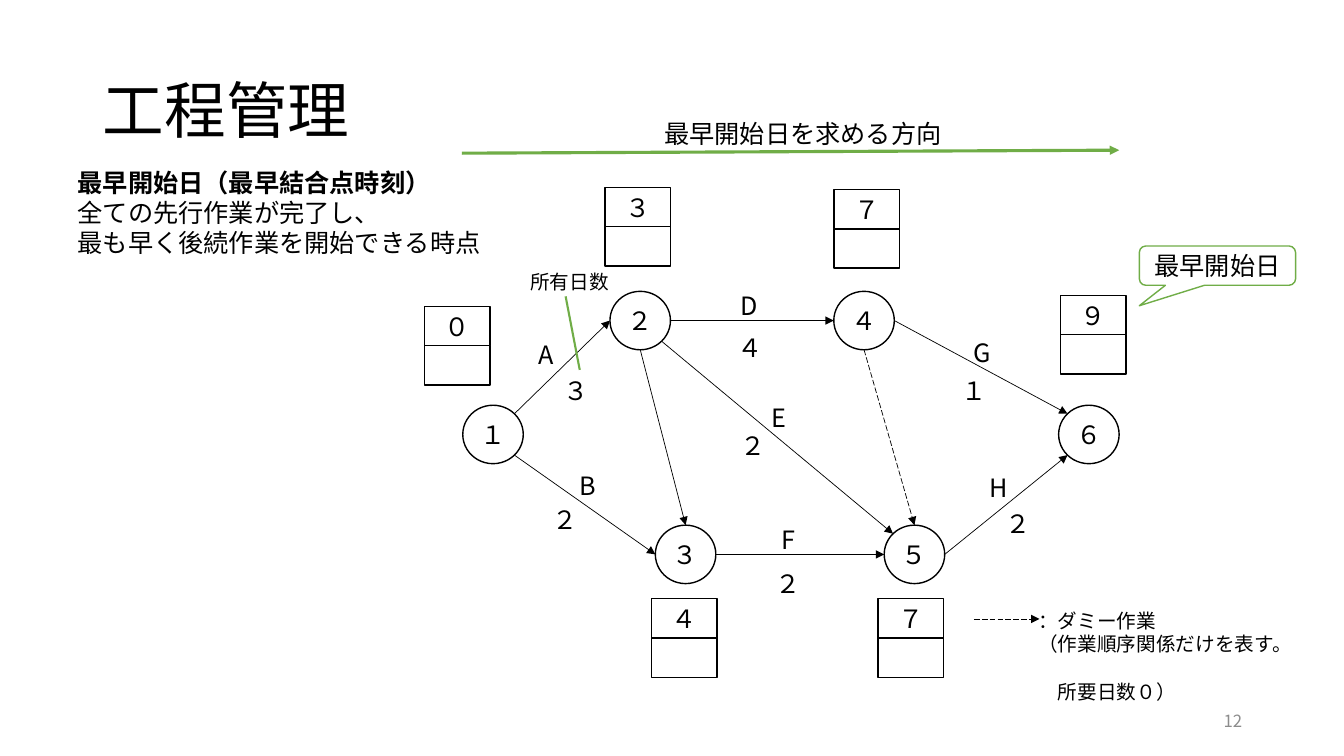
from math import cos, radians, sin

from lxml.etree import SubElement
from pptx import Presentation
from pptx.dml.color import RGBColor
from pptx.enum.dml import MSO_LINE
from pptx.enum.shapes import MSO_CONNECTOR, MSO_SHAPE
from pptx.enum.text import MSO_ANCHOR, MSO_AUTO_SIZE, PP_ALIGN
from pptx.oxml.ns import qn
from pptx.util import Inches, Pt

BLACK = RGBColor(0x00, 0x00, 0x00)
GREEN = RGBColor(0x70, 0xAD, 0x47)
GRAY = RGBColor(0x8C, 0x8C, 0x8C)
FONT = "Noto Sans CJK JP"
LATIN_FONT = "Arial"

NODE_WIDTH, NODE_HEIGHT = 0.6, 0.58
CELL_WIDTH, CELL_HEIGHT = 0.65, 0.39
RIGHT, BOTTOM_RIGHT, BOTTOM, BOTTOM_LEFT = 0, 45, 90, 135
LEFT, TOP_LEFT, TOP, TOP_RIGHT = 180, 225, 270, 315

NODES = {
    "１": (4.59, 4.02), "２": (6.05, 2.89), "３": (6.5, 5.21),
    "４": (8.27, 2.89), "５": (8.77, 5.21), "６": (10.5, 4.02),
}
ACTIVITIES = [
    ("１", TOP_RIGHT, "２", LEFT, None),
    ("１", BOTTOM_RIGHT, "３", LEFT, None),
    ("２", BOTTOM, "３", TOP, None),
    ("３", RIGHT, "５", LEFT, None),
    ("２", BOTTOM_RIGHT, "５", TOP_LEFT, None),
    ("２", RIGHT, "４", LEFT, None),
    ("４", BOTTOM, "５", TOP, MSO_LINE.LONG_DASH),
    ("４", RIGHT, "６", TOP_LEFT, None),
    ("５", RIGHT, "６", BOTTOM_LEFT, None),
]
LABELS = [
    ("A", 5.24, 3.32), ("３", 5.49, 3.67), ("B", 5.65, 4.62), ("２", 5.38, 4.95),
    ("D", 7.25, 2.83), ("４", 7.22, 3.25), ("E", 7.55, 3.94), ("２", 7.25, 4.22),
    ("F", 7.65, 5.15), ("２", 7.59, 5.59), ("G", 9.56, 3.3), ("１", 9.44, 3.67),
    ("H", 9.72, 4.64), ("２", 9.87, 4.99),
]
START_DAYS = [
    ("３", 6, 1.86), ("０", 4.21, 3.04), ("４", 6.46, 5.94),
    ("７", 8.71, 5.94), ("７", 8.27, 1.88), ("９", 10.52, 2.93),
]


def write(para, text, size=18, color=BLACK, bold=False, font=FONT, align=PP_ALIGN.LEFT):
    """Put one formatted span into a paragraph."""
    para.alignment = align
    span = para.add_run()
    span.text = text
    span.font.size = Pt(size)
    span.font.bold = bold
    span.font.color.rgb = color
    span.font.name = font
    SubElement(span.font._element, qn("a:ea")).set("typeface", FONT)


def place(shape, left, top, width, height):
    """Move and size a shape."""
    shape.left, shape.top = Inches(left), Inches(top)
    shape.width, shape.height = Inches(width), Inches(height)


def add_text(page, text, left, top, width=0.5, height=0.4, **style):
    """Add a wrapped text box with one paragraph and return its frame."""
    box = page.shapes.add_textbox(Inches(left), Inches(top), Inches(width), Inches(height))
    frame = box.text_frame
    frame.word_wrap = True
    write(frame.paragraphs[0], text, **style)
    return frame


def add_outline(page, kind, left, top, width, height, text="", color=BLACK):
    """Add an unfilled shape with optional centred text."""
    shape = page.shapes.add_shape(kind, Inches(left), Inches(top), Inches(width), Inches(height))
    shape.shadow.inherit = False
    shape.fill.background()
    shape.line.color.rgb = color
    shape.line.width = Pt(1)
    frame = shape.text_frame
    frame.margin_left = frame.margin_right = frame.margin_top = frame.margin_bottom = 0
    frame.vertical_anchor = MSO_ANCHOR.MIDDLE
    if text:
        write(frame.paragraphs[0], text, align=PP_ALIGN.CENTER)
    return shape


def add_line(page, start, end, color=BLACK, width=0.5, dash=None, arrow=True):
    """Add a straight line, with an arrowhead at its end if wanted."""
    line = page.shapes.add_connector(MSO_CONNECTOR.STRAIGHT, *map(Inches, start + end))
    line.line.color.rgb = color
    line.line.width = Pt(width)
    if dash:
        line.line.dash_style = dash
    if arrow:
        SubElement(line.line._get_or_add_ln(), qn("a:tailEnd")).set("type", "triangle")
    SubElement(line._element.spPr, qn("a:effectLst"))


def node_edge(name, angle):
    """Return the point on a node's rim at a clockwise angle."""
    left, top = NODES[name]
    return (left + NODE_WIDTH / 2 * (1 + cos(radians(angle))),
            top + NODE_HEIGHT / 2 * (1 + sin(radians(angle))))


def add_heading(page):
    """Fill the title and the definition in the body placeholder."""
    title, body = page.shapes.title, page.placeholders[1]
    place(title, 0.92, 0.4, 11.5, 1.45)
    title.text_frame.vertical_anchor = MSO_ANCHOR.MIDDLE
    write(title.text_frame.paragraphs[0], "工程管理", size=44)
    title.text_frame.paragraphs[0].line_spacing = 0.9

    place(body, 0.67, 1.61, 11.99, 1.62)
    frame = body.text_frame
    frame.auto_size = MSO_AUTO_SIZE.NONE
    lines = ["最早開始日（最早結合点時刻）", "全ての先行作業が完了し、", "最も早く後続作業を開始できる時点"]
    for index, text in enumerate(lines):
        para = frame.add_paragraph() if index else frame.paragraphs[0]
        write(para, text, bold=index == 0, font=LATIN_FONT)
        para.space_before = Pt(0)
        properties = para._p.get_or_add_pPr()
        properties.set("marL", "0")
        properties.set("indent", "0")
        SubElement(properties, qn("a:buNone"))


def add_network(page):
    """Draw the nodes, activities, labels and start day boxes."""
    for name, (left, top) in NODES.items():
        add_outline(page, MSO_SHAPE.FLOWCHART_CONNECTOR, left, top, NODE_WIDTH, NODE_HEIGHT, name)
    for source, leave, target, arrive, dash in ACTIVITIES:
        add_line(page, node_edge(source, leave), node_edge(target, arrive), dash=dash)
    for text, left, top in LABELS:
        add_text(page, text, left, top)
    for day, left, top in START_DAYS:
        for row, text in enumerate((day, "")):
            add_outline(page, MSO_SHAPE.RECTANGLE, left, top + row * CELL_HEIGHT,
                        CELL_WIDTH, CELL_HEIGHT, text)


def add_legend(page):
    """Explain the dashed dummy activity."""
    add_line(page, (9.66, 6.14), (10.31, 6.14), dash=MSO_LINE.LONG_DASH)
    frame = add_text(page, "：ダミー作業", 10.2, 5.99, 2.76, 0.81, size=14)
    write(frame.add_paragraph(), "（作業順序関係だけを表す。", size=14)
    last = frame.add_paragraph()
    write(last, "所要日数０）", size=14)
    last.space_before = Pt(17)
    last._p.get_or_add_pPr().set("marL", str(Pt(14)))


def add_notes_on_diagram(page):
    """Add the direction arrow, the callout and the duration pointer."""
    add_line(page, (4.58, 1.52), (11.1, 1.49), color=GREEN, width=2.25)
    add_text(page, "最早開始日を求める方向", 6.49, 1.12, 3.03)
    callout = add_outline(page, MSO_SHAPE.ROUNDED_RECTANGULAR_CALLOUT, 11.3, 2.44, 1.55, 0.39,
                          "最早開始日", GREEN)
    callout.adjustments[0], callout.adjustments[1] = -0.5, 1.02
    add_line(page, (5.75, 3.67), (5.61, 2.94), color=GREEN, width=1.5, arrow=False)
    add_text(page, "所有日数", 5.16, 2.63, 1.12, 0.34, size=14)


def main():
    """Build the slide and save it."""
    deck = Presentation()
    deck.slide_width, deck.slide_height = Inches(13.33), Inches(7.5)
    page = deck.slides.add_slide(deck.slide_layouts[1])
    add_heading(page)
    add_network(page)
    add_legend(page)
    add_notes_on_diagram(page)
    number = add_text(page, "12", 9.42, 6.95, 3, size=12, color=GRAY, align=PP_ALIGN.RIGHT)
    number.vertical_anchor = MSO_ANCHOR.MIDDLE
    deck.save("out.pptx")


if __name__ == "__main__":
    main()
